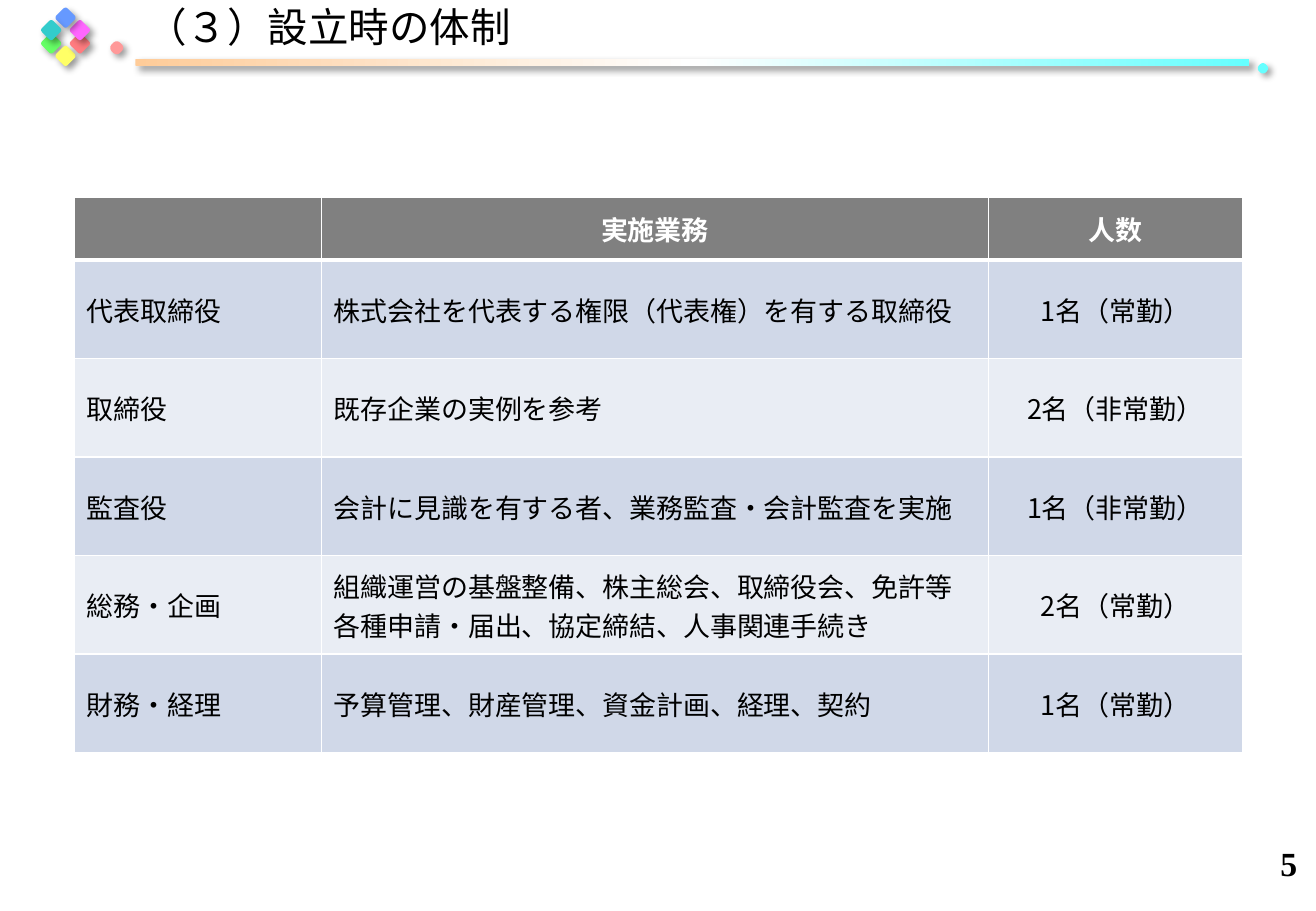
from copy import deepcopy
from dataclasses import dataclass

from lxml.etree import SubElement as Sub
from pptx import Presentation
from pptx.dml.color import RGBColor as Rgb
from pptx.enum.shapes import MSO_SHAPE as Form
from pptx.enum.text import MSO_ANCHOR as Anchor, MSO_AUTO_SIZE as Auto, PP_ALIGN as Align
from pptx.oxml import parse_xml
from pptx.oxml.ns import nsdecls, qn
from pptx.util import Cm, Pt


@dataclass(frozen=True)
class Theme:
    font: str = "Noto Sans CJK JP"
    serif: str = "Times New Roman"
    title: int = 24
    body: int = 16
    page: int = 20
    ink: str = "000000"
    white: str = "FFFFFF"
    head: str = "808080"
    bands: tuple = ("D0D8E8", "E9EDF4")
    bar: tuple = ("FFCC99", "FFFFFF", "66FFFF")
    start: str = "FF9999"
    end: str = "66FFFF"
    gems: tuple = ("66FF66", "FFFF66", "FF7C80", "FF66FF", "6699FF", "33CCCC")


class Deck:
    def __init__(self, theme):
        self.theme = theme
        self.file = Presentation()
        self.file.slide_width, self.file.slide_height = Cm(27.51), Cm(19.05)
        self.slide = self.file.slides.add_slide(self.file.slide_layouts[5])

    def style(self, para, size, color=None, bold=False, face=None, align=Align.LEFT):
        para.alignment = align
        for run in para.runs:
            font = run.font
            font.size, font.bold = Pt(size), bold
            font.name = face or self.theme.font
            font.color.rgb = Rgb.from_string(color or self.theme.ink)
            Sub(run._r.get_or_add_rPr(), qn("a:ea"), typeface=font.name)

    def shade(self, shape):
        shape.line.fill.background()
        shape.shadow.inherit = False
        effects = shape._element.spPr.find(qn("a:effectLst"))
        drop = Sub(effects, qn("a:outerShdw"), blurRad=str(Pt(4)), dist=str(Pt(3)),
                   dir="2700000", algn="ctr", rotWithShape="0")
        tint = Sub(drop, qn("a:srgbClr"), val=self.theme.ink)
        Sub(tint, qn("a:alpha"), val="40000")

    def gem(self, x, y, size, color, curve=0.17):
        shape = self.slide.shapes.add_shape(
            Form.ROUNDED_RECTANGLE, Cm(x - size / 2), Cm(y - size / 2), Cm(size), Cm(size))
        shape.rotation = 45
        shape.adjustments[0] = curve
        shape.fill.solid()
        shape.fill.fore_color.rgb = Rgb.from_string(color)
        self.shade(shape)

    def bar(self, x, y, wide, high):
        shape = self.slide.shapes.add_shape(
            Form.ROUNDED_RECTANGLE, Cm(x), Cm(y), Cm(wide), Cm(high))
        shape.fill.gradient()
        shape.fill.gradient_angle = 0
        stops = shape._element.spPr.find(".//" + qn("a:gsLst"))
        stops.insert(1, deepcopy(stops[0]))
        for i, (stop, color) in enumerate(zip(shape.fill.gradient_stops, self.theme.bar)):
            stop.position = i / 2
            stop.color.rgb = Rgb.from_string(color)
        self.shade(shape)

    def title(self, text, x, y, wide, high):
        box = self.slide.shapes.title
        box.left, box.top, box.width, box.height = Cm(x), Cm(y), Cm(wide), Cm(high)
        frame = box.text_frame
        frame.text = text
        frame.auto_size, frame.word_wrap = Auto.NONE, True
        frame.vertical_anchor = Anchor.MIDDLE
        para = frame.paragraphs[0]
        para.space_before = Pt(6)
        self.style(para, self.theme.title)

    def page(self, text, x, y, wide, high):
        frame = self.slide.shapes.add_textbox(Cm(x), Cm(y), Cm(wide), Cm(high)).text_frame
        frame.text = text
        frame.word_wrap = True
        self.style(frame.paragraphs[0], self.theme.page, bold=True,
                   face=self.theme.serif, align=Align.CENTER)

    def edge(self, cell, widths):
        props = cell._tc.get_or_add_tcPr()
        for i, (side, width) in enumerate(zip("LRTB", widths)):
            props.insert(i, parse_xml(
                f'<a:ln{side} {nsdecls("a")} w="{Pt(width)}"><a:solidFill>'
                f'<a:srgbClr val="{self.theme.white}"/></a:solidFill></a:ln{side}>'))

    def table(self, rows, x, y, cols, highs):
        grid = self.slide.shapes.add_table(
            len(rows), len(cols), Cm(x), Cm(y), Cm(sum(cols)), Cm(sum(highs))).table
        for col, wide in zip(grid.columns, cols):
            col.width = Cm(wide)
        for r, (row, high) in enumerate(zip(rows, highs)):
            grid.rows[r].height = Cm(high)
            top = r == 0
            back = self.theme.head if top else self.theme.bands[(r - 1) % 2]
            for c, text in enumerate(row):
                cell = grid.cell(r, c)
                cell.text_frame.text = text
                cell.vertical_anchor = Anchor.MIDDLE
                cell.fill.solid()
                cell.fill.fore_color.rgb = Rgb.from_string(back)
                self.edge(cell, (1, 1, 3 if r == 1 else 1, 3 if top else 1))
                self.style(cell.text_frame.paragraphs[0], self.theme.body,
                           self.theme.white if top else self.theme.ink, bold=top,
                           align=Align.CENTER if top or c == 2 else Align.LEFT)


ROWS = [
    ("", "実施業務", "人数"),
    ("代表取締役", "株式会社を代表する権限（代表権）を有する取締役", "1名（常勤）"),
    ("取締役", "既存企業の実例を参考", "2名（非常勤）"),
    ("監査役", "会計に見識を有する者、業務監査・会計監査を実施", "1名（非常勤）"),
    ("総務・企画", "組織運営の基盤整備、株主総会、取締役会、免許等各種申請・届出、"
     "協定締結、人事関連手続き", "2名（常勤）"),
    ("財務・経理", "予算管理、財産管理、資金計画、経理、契約", "1名（常勤）"),
]
RING = [(-0.3, 0.14), (0, 0.4), (0.3, 0.14), (0.3, -0.14), (0, -0.4), (-0.3, -0.14)]


def main():
    theme = Theme()
    deck = Deck(theme)
    for (x, y), color in zip(RING, theme.gems):
        deck.gem(1.37 + x, 0.77 + y, 0.33, color)
    deck.bar(2.83, 1.23, 23.29, 0.15)
    deck.gem(26.4, 1.43, 0.2, theme.end, 0.38)
    deck.gem(2.44, 1, 0.25, theme.start, 0.38)
    deck.page("5", 26, 17.5, 1.88, 1.02)
    deck.title("（３）設立時の体制", 2.8, 0, 23.29, 1.1)
    deck.table(ROWS, 1.56, 4.12, (5.16, 13.94, 5.31), (1.32,) + (2.06,) * 5)
    deck.file.save("out.pptx")


if __name__ == "__main__":
    main()
